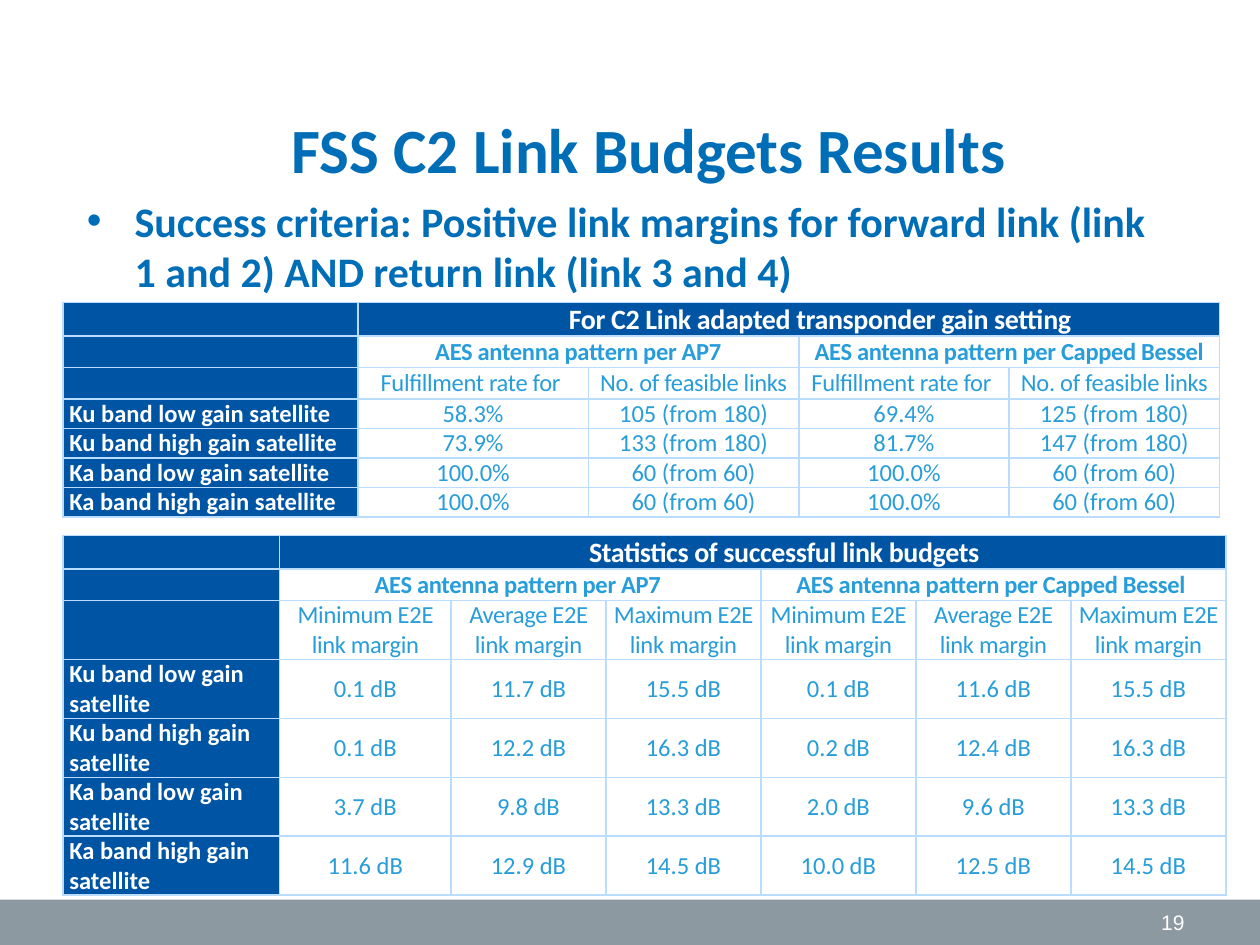
from dataclasses import dataclass

import pptx
import pptx.dml.color
import pptx.enum.shapes
import pptx.enum.text
import pptx.oxml.ns
import pptx.util
from lxml import etree

Inches, Pt = pptx.util.Inches, pptx.util.Pt
RGBColor = pptx.dml.color.RGBColor
ALIGN = pptx.enum.text.PP_ALIGN
ANCHOR = pptx.enum.text.MSO_ANCHOR
qn = pptx.oxml.ns.qn

BLUE = RGBColor(0x00, 0x6E, 0xB7)
NAVY = RGBColor(0x00, 0x54, 0xA4)
SKY = RGBColor(0x27, 0x9D, 0xD9)
PALE = RGBColor(0xBA, 0xDD, 0xFF)
GREY = RGBColor(0x8C, 0x99, 0xA1)
WHITE = RGBColor(0xFF, 0xFF, 0xFF)

ROWS = [0.22, 0.25, 0.25] + [0.2] * 4
BANDS = [f"{band} band {gain} gain satellite"
         for band in ("Ku", "Ka") for gain in ("low", "high")]


@dataclass
class Grid:
    top: float
    height: float
    cols: list[float]
    pad: float        # side margin of the value cells
    title: str
    groups: list[str]
    heads: list[str]  # repeated under each group
    values: list[list[str]]


@dataclass
class Style:
    size: float = 14
    color: RGBColor = SKY
    bold: bool = False
    face: str = "Calibri"
    spc: int = 0      # hundredths of a point


TITLE = Style(36, BLUE, True)
POINT = Style(24, BLUE, True)
PAGE = Style(12, WHITE, face="Arial")
TOP = Style(16, WHITE, True, spc=-20)
GROUP = Style(14, SKY, True, spc=-20)
HEAD = Style(spc=-20)
LABEL = Style(14, WHITE, True)
VALUE = Style()


def write(para, text: str, style: Style, align=ALIGN.LEFT) -> None:
    para.alignment = align
    run = para.add_run()
    run.text = text
    font = run.font
    font.size, font.bold, font.name = Pt(style.size), style.bold, style.face
    font.color.rgb = style.color
    if style.spc:
        font._element.set("spc", str(style.spc))


def indent(para, left: float, first: float) -> None:
    props = para._p.get_or_add_pPr()
    props.set("marL", str(Inches(left)))
    props.set("indent", str(Inches(first)))


def edge(cell) -> None:
    """Give all four sides of a cell a thin pale line."""
    props = cell._tc.get_or_add_tcPr()
    for spot, side in enumerate(("lnL", "lnR", "lnT", "lnB")):
        line = etree.Element(qn(f"a:{side}"), w=str(Pt(1)))
        fill = etree.SubElement(line, qn("a:solidFill"))
        etree.SubElement(fill, qn("a:srgbClr"), val=str(PALE))
        props.insert(spot, line)


def fill_cell(cell, text: str, style: Style, align=ALIGN.CENTER, before: float = 0):
    para = cell.text_frame.paragraphs[0]
    write(para, text, style, align)
    if before:
        para.space_before = Pt(before)
    return para


def draw_grid(slide, grid: Grid) -> None:
    frame = slide.shapes.add_table(
        len(ROWS), len(grid.cols), Inches(0.5), Inches(grid.top),
        Inches(sum(grid.cols)), Inches(grid.height))
    table = frame.table
    table.first_row = table.horz_banding = False
    for col, width in zip(table.columns, grid.cols):
        col.width = Inches(width)
    for row, height in zip(table.rows, ROWS):
        row.height = Inches(height)
    frame.height = Inches(grid.height)

    # Fills, borders and margins
    for r in range(len(ROWS)):
        for c in range(len(grid.cols)):
            cell = table.cell(r, c)
            cell.vertical_anchor = ANCHOR.MIDDLE
            pad = grid.pad if r > 1 and c > 0 else 0.05
            cell.margin_left = cell.margin_right = Inches(pad)
            cell.margin_top = cell.margin_bottom = 0
            if r == 0 or c == 0:
                cell.fill.solid()
                cell.fill.fore_color.rgb = NAVY
            else:
                cell.fill.background()
            edge(cell)

    # Header rows
    for r in range(3):
        blank = table.cell(r, 0).text_frame.paragraphs[0]
        etree.SubElement(blank._p, qn("a:endParaRPr"), sz="1000")
    table.cell(0, 1).merge(table.cell(0, len(grid.cols) - 1))
    indent(fill_cell(table.cell(0, 1), grid.title, TOP, before=3), 0.5, 0)
    span = len(grid.heads)
    for g, group in enumerate(grid.groups):
        start = 1 + g * span
        table.cell(1, start).merge(table.cell(1, start + span - 1))
        fill_cell(table.cell(1, start), group, GROUP, before=3)
        for h, head in enumerate(grid.heads):
            fill_cell(table.cell(2, start + h), head, HEAD, before=3)

    # Data rows
    for r, (band, values) in enumerate(zip(BANDS, grid.values), 3):
        fill_cell(table.cell(r, 0), band, LABEL, ALIGN.LEFT)
        for c, value in enumerate(values, 1):
            fill_cell(table.cell(r, c), value, VALUE)


def add_text(slide, left: float, top: float, width: float, height: float):
    box = slide.shapes.add_textbox(
        Inches(left), Inches(top), Inches(width), Inches(height))
    box.text_frame.word_wrap = True
    return box.text_frame


GRIDS = [
    Grid(2.4, 1.7, [2.34, 1.83] + [1.67] * 3, 0.05,
         "For C2 Link adapted transponder gain setting",
         ["AES antenna pattern per AP7", "AES antenna pattern per Capped Bessel"],
         ["Fulfillment rate for ", "No. of feasible links"],
         [["58.3%", "105 (from 180)", "69.4%", "125 (from 180)"],
          ["73.9%", "133 (from 180)", "81.7%", "147 (from 180)"]]
         + [["100.0%", "60 (from 60)"] * 2] * 2),
    Grid(4.25, 2.85, [1.72, 1.36] + [1.23] * 5, 0,
         "Statistics of successful link budgets",
         ["AES antenna pattern per AP7 ", "AES antenna pattern per Capped Bessel "],
         [f"{kind} E2E link margin" for kind in ("Minimum", "Average", "Maximum")],
         [[f"{num} dB" for num in line.split()] for line in (
             "0.1 11.7 15.5 0.1 11.6 15.5",
             "0.1 12.2 16.3 0.2 12.4 16.3",
             "3.7 9.8 13.3 2.0 9.6 13.3",
             "11.6 12.9 14.5 10.0 12.5 14.5")]),
]


def main() -> None:
    deck = pptx.Presentation()
    deck.slide_width, deck.slide_height = Inches(10), Inches(7.5)
    slide = deck.slides.add_slide(deck.slide_layouts[5])

    # Footer bar
    bar = slide.shapes.add_shape(
        pptx.enum.shapes.MSO_SHAPE.RECTANGLE,
        0, Inches(7.14), Inches(10), Inches(0.36))
    bar.shadow.inherit = False
    bar.fill.solid()
    bar.fill.fore_color.rgb = GREY
    bar.line.fill.background()

    # Title
    title = slide.shapes.title
    title.left, title.top = Inches(0.61), Inches(0.78)
    title.width, title.height = Inches(9.08), Inches(0.79)
    title.text_frame.vertical_anchor = ANCHOR.MIDDLE
    write(title.text_frame.paragraphs[0], "FSS C2 Link Budgets Results",
          TITLE, ALIGN.CENTER)

    # Success criteria
    point = add_text(slide, 0.59, 1.5, 8.71, 0.91).paragraphs[0]
    indent(point, 0.38, -0.38)
    props = point._p.get_or_add_pPr()
    etree.SubElement(props, qn("a:buFont"), typeface="Arial")
    etree.SubElement(props, qn("a:buChar"), char="•")
    write(point, "Success criteria: Positive link margins for forward link "
          "(link 1 and 2) AND return link (link 3 and 4)", POINT)

    # Page number
    page = add_text(slide, 7.17, 7.14, 2.33, 0.36)
    page.vertical_anchor = ANCHOR.MIDDLE
    write(page.paragraphs[0], "19", PAGE, ALIGN.RIGHT)

    # Tables
    for grid in GRIDS:
        draw_grid(slide, grid)

    deck.save("out.pptx")


if __name__ == "__main__":
    main()
